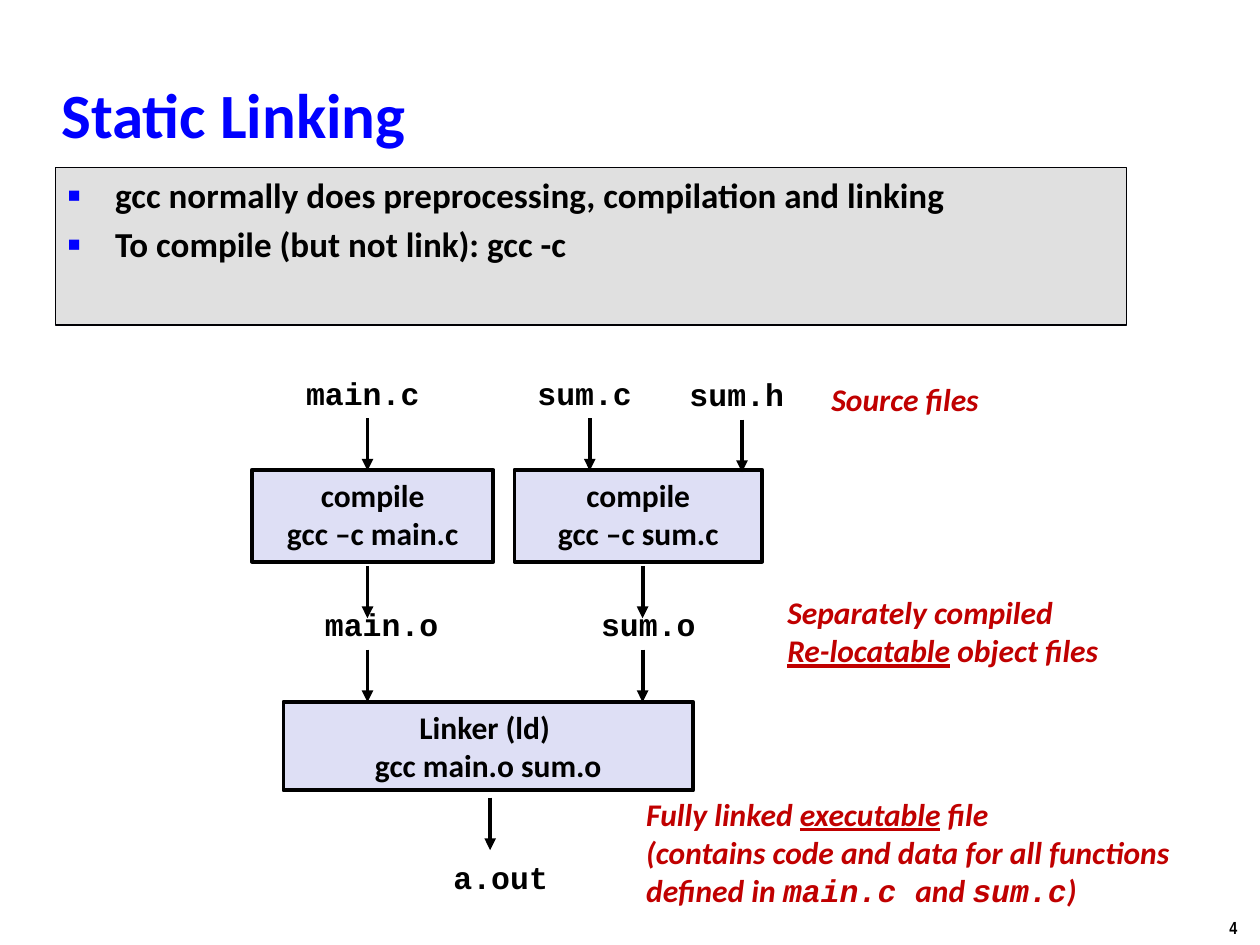
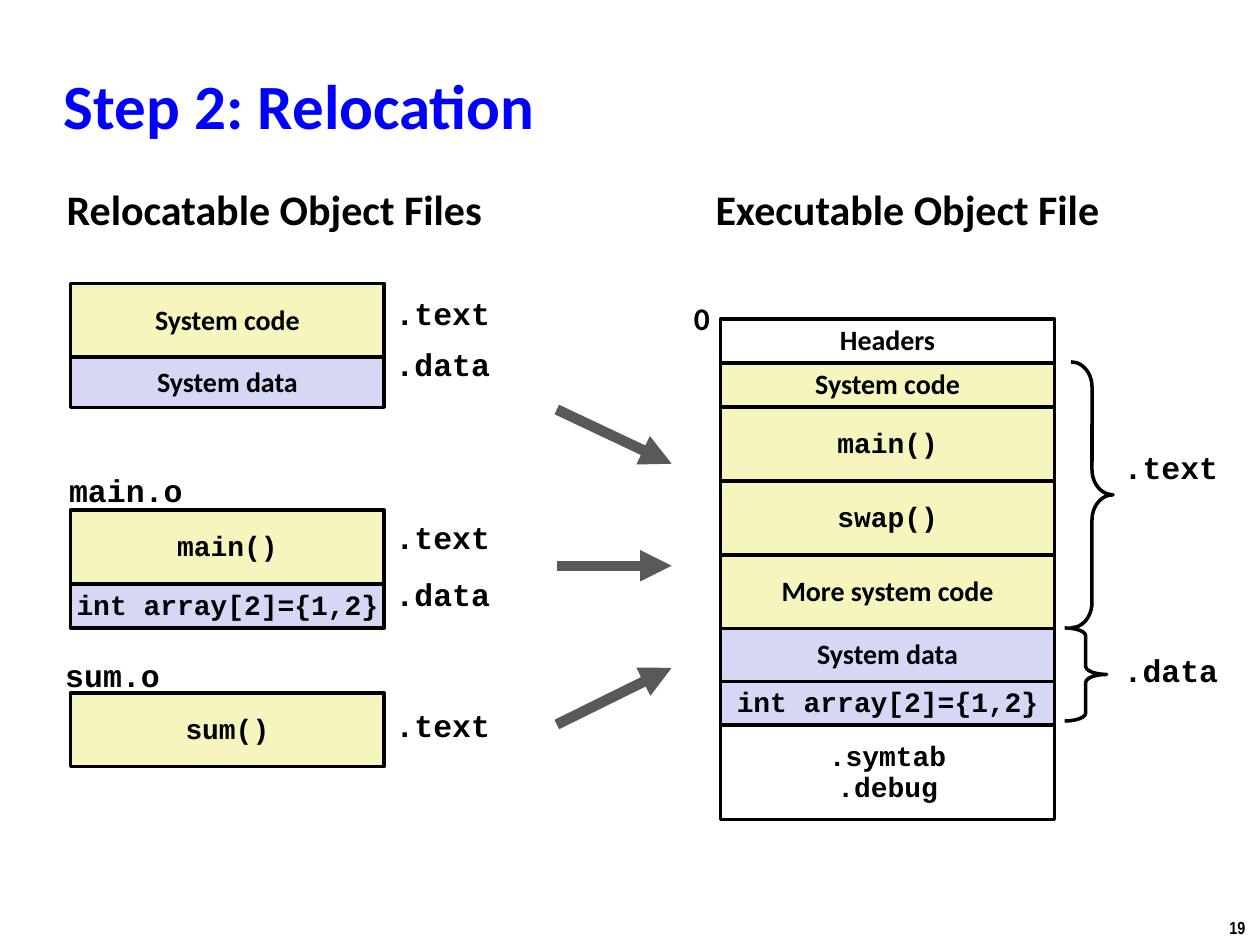
import pptx
import pptx.dml.color
import pptx.enum.shapes
import pptx.enum.text
import pptx.oxml
import pptx.oxml.ns
import pptx.util

Pt = pptx.util.Pt
RGB = pptx.dml.color.RGBColor
ALIGN = pptx.enum.text.PP_ALIGN
ANCHOR = pptx.enum.text.MSO_ANCHOR
FIT = pptx.enum.text.MSO_AUTO_SIZE
SHAPE = pptx.enum.shapes.MSO_SHAPE
LINK = pptx.enum.shapes.MSO_CONNECTOR

BLACK = RGB(0x00, 0x00, 0x00)
WHITE = RGB(0xFF, 0xFF, 0xFF)
BLUE = RGB(0x00, 0x00, 0xFF)
RED = RGB(0xC0, 0x00, 0x00)
EDGE = RGB(0x00, 0x00, 0x04)
PANEL = RGB(0xE0, 0xE0, 0xE0)
STEP = RGB(0xDE, 0xDF, 0xF5)
CODE = RGB(0xF6, 0xF5, 0xBD)
DATA = RGB(0xD6, 0xD6, 0xF5)
GRAY = RGB(0x59, 0x59, 0x59)

SANS = "Calibri"
MONO = "Courier New"
SMALL = "Arial Narrow"


def write(shape, lines, size=18, font=SANS, color=BLACK, italic=False,
          align=ALIGN.LEFT, anchor=ANCHOR.TOP, wrap=True, space=1.0, before=0):
    """Fill a shape; a line is a string or a list of (text, changes) runs."""
    frame = shape.text_frame
    frame.word_wrap = wrap
    frame.vertical_anchor = anchor
    for i, line in enumerate(lines):
        para = frame.paragraphs[0] if i == 0 else frame.add_paragraph()
        para.alignment = align
        para.line_spacing = space
        para.space_before = Pt(before)
        for text, change in [(line, {})] if isinstance(line, str) else line:
            run = para.add_run()
            run.text = text
            run.font.size = Pt(size)
            run.font.bold = True
            run.font.italic = italic
            run.font.name = change.get("font", font)
            run.font.underline = change.get("under", False)
            run.font.color.rgb = color


def note(slide, lines, left, top, width, height, **form):
    """Free text that keeps to its own lines."""
    box = slide.shapes.add_textbox(Pt(left), Pt(top), Pt(width), Pt(height))
    write(box, lines, wrap=False, **form)
    box.text_frame.auto_size = FIT.SHAPE_TO_FIT_TEXT


def label(slide, text, left, top, space=1.0):
    """Code name; each 18 pt fixed-width letter takes 10.8 pt."""
    note(slide, [text], left, top, 14.4 + 10.8 * len(text), 28.5,
         font=MONO, space=space)


def block(slide, lines, left, top, width, height, fill, edge=BLACK, weight=2.25, **form):
    box = slide.shapes.add_shape(SHAPE.RECTANGLE, Pt(left), Pt(top), Pt(width), Pt(height))
    box.shadow.inherit = False
    box.fill.solid()
    box.fill.fore_color.rgb = fill
    box.line.color.rgb = edge
    box.line.width = Pt(weight)
    write(box, lines, **form)
    return box


def stack(slide, left, top, width, rows):
    """Memory sections, one below the other."""
    for lines, font, fill, height in rows:
        block(slide, lines, left, top, width, height, fill, weight=2, size=16,
              font=font, align=ALIGN.CENTER, anchor=ANCHOR.MIDDLE, wrap=False,
              space=0.94 if font == MONO else 0.98)
        top += height


def arrow(slide, x1, y1, x2, y2, color=BLACK, weight=2.25):
    line = slide.shapes.add_connector(LINK.STRAIGHT, Pt(x1), Pt(y1), Pt(x2), Pt(y2))
    line.line.color.rgb = color
    line.line.width = Pt(weight)
    props = line._element.spPr
    props.find(pptx.oxml.ns.qn("a:ln")).append(make('<a:tailEnd %s type="triangle"/>'))
    props.append(make("<a:effectLst %s/>"))


def make(xml):
    return pptx.oxml.parse_xml(xml % pptx.oxml.ns.nsdecls("a"))


def brace(slide, left, top, height, curve):
    mark = slide.shapes.add_shape(SHAPE.RIGHT_BRACE, Pt(left), Pt(top), Pt(24), Pt(height))
    mark.shadow.inherit = False
    mark.adjustments[0] = curve
    mark.fill.background()
    mark.line.color.rgb = BLACK
    mark.line.width = Pt(2)


def bullet(box):
    for para in box.text_frame.paragraphs:
        props = para._p.get_or_add_pPr()
        props.set("marL", str(Pt(27)))
        props.set("indent", str(-Pt(27)))
        for xml in (f'<a:buClr %s><a:srgbClr val="{BLUE}"/></a:buClr>',
                    '<a:buSzPct %s val="60000"/>',
                    '<a:buFont %s typeface="Arial"/>',
                    '<a:buChar %s char="■"/>'):
            props.append(make(xml))


def start(deck, title, number, left, top, height):
    """New slide with title and page number."""
    slide = deck.slides.add_slide(deck.slide_layouts[6])
    note(slide, [number], 695.5, 520.6, 24.5, 19.4, size=10, font=SMALL)
    box = slide.shapes.add_textbox(Pt(left), Pt(top), Pt(598), Pt(height))
    write(box, [title], size=36, color=BLUE, anchor=ANCHOR.MIDDLE)
    return slide


def linking(deck):
    slide = start(deck, "Static Linking", "4", 28, 34.6, 59.8)
    panel = block(slide, ["gcc normally does preprocessing, compilation and linking",
                          "To compile (but not link): gcc -c"],
                  31.7, 95.8, 612, 90, PANEL, EDGE, 0.75, size=20, before=4)
    bullet(panel)

    for lines, left, top, width, height in (
            (["Linker (ld) ", "gcc main.o sum.o"], 162, 401, 234, 50.7),
            (["compile", "gcc –c main.c"], 144, 268.5, 138, 52.5),
            (["compile", "gcc –c sum.c"], 294, 268.5, 141.5, 52.5)):
        block(slide, lines, left, top, width, height, STEP, align=ALIGN.CENTER)

    for text, left, top in (("main.c", 167.8, 210.2), ("sum.c", 300, 210.2),
                            ("sum.h", 386.9, 211), ("main.o", 178.6, 342),
                            ("sum.o", 336.4, 342), ("a.out", 252, 486.7)):
        label(slide, text, left, top)

    for x, y in ((210, 239), (337, 239), (424, 239.8), (210, 323.3), (367.2, 323.3),
                 (210, 371.3), (367.2, 371.3), (280.1, 455.8)):
        arrow(slide, x, y, x, y + 30)

    under, mono = {"under": True}, {"font": MONO}
    for lines, left, top, width, height in (
            (["Source files"], 468, 213.8, 103.7, 28.8),
            (["Separately compiled",
              [("Re-locatable", under), (" object files", {})]],
             442.8, 335.5, 199.4, 51),
            ([[("Fully linked ", {}), ("executable", under), (" file", {})],
              "(contains code and data for all functions",
              [("defined in ", {}), ("main.c ", mono), ("and ", {}),
               ("sum.c", mono), (")", {})]],
             362.2, 450.7, 321, 72.7)):
        note(slide, lines, left, top, width, height, color=RED, italic=True)


def moving(deck):
    slide = start(deck, "Step 2: Relocation", "19", 29.5, 36.7, 45.4)
    note(slide, ["Relocatable Object Files"], 31, 103, 254, 36, size=24, space=0.98)
    note(slide, ["Executable Object File"], 401.8, 103, 236, 36, size=24, space=0.98)

    code = (["System code"], SANS, CODE)
    data = (["System data"], SANS, DATA)
    main_fn = (["main()"], MONO, CODE)
    array = (["int array[2]={1,2}"], MONO, DATA)
    files = ((162, [(*code, 42), (*data, 28.8)]),
             (291.6, [(*main_fn, 42), (*array, 25.2)]),
             (396, [(["sum()"], MONO, CODE, 42)]))
    for top, rows in files:
        stack(slide, 40.3, top, 179.3, rows)
    stack(slide, 411.8, 182.2, 190.8, [
        (["Headers"], SANS, WHITE, 25.2),
        (*code, 25.2),
        (*main_fn, 42.2),
        (["swap()"], MONO, CODE, 42.2),
        (["More system code"], SANS, CODE, 42.2),
        (*data, 30.2),
        (*array, 25),
        ([".symtab", ".debug"], MONO, WHITE, 54)])
    note(slide, ["0"], 389.5, 168.5, 24.5, 28.8, space=0.98)

    for text, left, top in (("main.o", 32.4, 267.1), ("sum.o", 30.2, 373),
                            (".text", 218.9, 166.3), (".data", 218.9, 195.1),
                            (".text", 218.9, 294.5), (".data", 218.9, 326.9),
                            (".text", 218.9, 401.8), (".text", 635, 254.2),
                            (".data", 635, 370.1)):
        label(slide, text, left, top, space=0.94)

    brace(slide, 612, 206.8, 152, 0.6)
    brace(slide, 608.4, 358.8, 53.2, 0.19)
    for y1, y2 in ((234, 265), (323.3, 323.3), (414, 381.6)):
        arrow(slide, 318.2, y1, 383.8, y2, GRAY, 6)


def main():
    deck = pptx.Presentation()
    deck.slide_width = Pt(720)
    deck.slide_height = Pt(540)
    linking(deck)
    moving(deck)
    deck.save("out.pptx")


if __name__ == "__main__":
    main()
